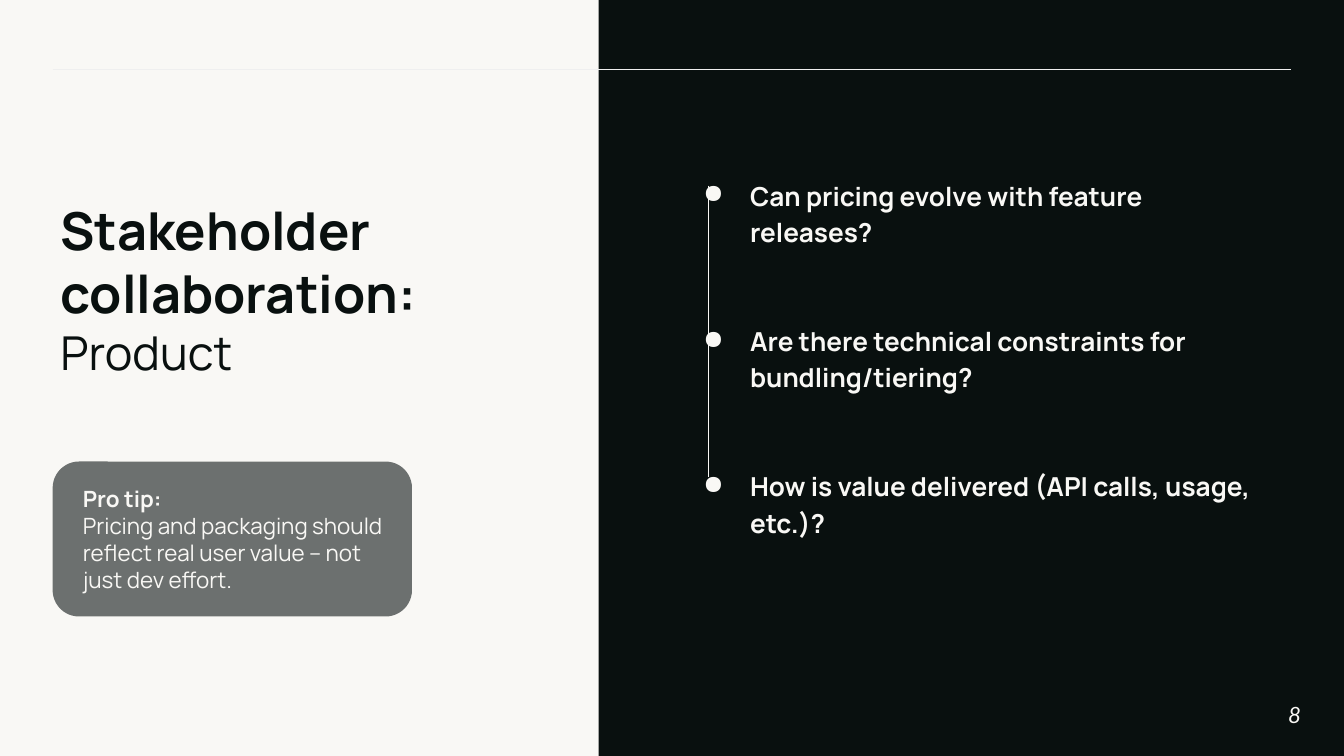
from lxml.etree import SubElement
from pptx import Presentation
from pptx.dml.color import RGBColor
from pptx.enum.shapes import MSO_CONNECTOR, MSO_SHAPE
from pptx.enum.text import MSO_ANCHOR, MSO_AUTO_SIZE, PP_ALIGN
from pptx.oxml.ns import qn
from pptx.util import Pt

TITLE = [[("Stakeholder collaboration: ", {"size": "title", "bold": True}),
          ("Product", {"size": "subtitle"})]]
QUESTIONS = [
    "Can pricing evolve with feature releases?",
    "Are there technical constraints for bundling/tiering?",
    "How is value delivered (API calls, usage, etc.)?",
]
TIP = [
    [("Pro tip:", {"bold": True})],
    [("Pricing and packaging should reflect real user value – not just dev effort.", {})],
]
PAGE_NUMBER = "8"

THEME = {
    "font": "Manrope",
    "number_font": "Lato",
    "ink": "09100F",
    "paper": "F9F8F5",
    "rule": "EFEFEF",
    "tip": "6C706F",
    "sizes": {"title": 28, "subtitle": 25, "question": 14, "small": 12},
}
PAGE_WIDTH, PAGE_HEIGHT = 720, 405
PANEL_LEFT = 320.7
MARGIN = 28.2


def color(name):
    return RGBColor.from_string(THEME[name])


def write(box, paragraphs, ink="paper", size="small", font="font", italic=False,
          align=PP_ALIGN.LEFT, anchor=MSO_ANCHOR.TOP, inset=0,
          line_spacing=None, gap=0, after=0, bulleted=False):
    frame = box.text_frame
    frame.word_wrap = True
    frame.auto_size = MSO_AUTO_SIZE.NONE
    frame.vertical_anchor = anchor
    frame.margin_left = frame.margin_right = Pt(inset)
    frame.margin_top = frame.margin_bottom = Pt(inset)
    for index, spans in enumerate(paragraphs):
        para = frame.add_paragraph() if index else frame.paragraphs[0]
        para.alignment = align
        para.space_before = Pt(gap if index else 0)
        para.space_after = Pt(after)
        if line_spacing:
            para.line_spacing = line_spacing
        if bulleted:
            add_bullet(para, ink)
        for text, style in spans:
            span = para.add_run()
            span.text = text
            span.font.name = THEME[font]
            span.font.size = Pt(THEME["sizes"][style.get("size", size)])
            span.font.bold = style.get("bold", False)
            span.font.italic = italic
            span.font.color.rgb = color(ink)


def add_bullet(para, ink):
    properties = para._p.get_or_add_pPr()
    properties.set("marL", str(Pt(36)))
    properties.set("indent", str(-Pt(25.2)))
    bullet_color = SubElement(properties, qn("a:buClr"))
    SubElement(bullet_color, qn("a:srgbClr"), val=THEME[ink])
    SubElement(properties, qn("a:buChar"), char="●")


def add_block(page, kind, left, top, width, height, fill):
    block = page.shapes.add_shape(kind, Pt(left), Pt(top), Pt(width), Pt(height))
    block.shadow.inherit = False
    block.fill.solid()
    block.fill.fore_color.rgb = color(fill)
    block.line.fill.background()
    return block


def add_line(page, start, end, ink):
    line = page.shapes.add_connector(
        MSO_CONNECTOR.STRAIGHT, *(Pt(value) for value in start + end))
    line.line.color.rgb = color(ink)
    line.line.width = Pt(0.75)
    SubElement(line._element.spPr, qn("a:effectLst"))


def add_text(page, left, top, width, height, paragraphs, **style):
    box = page.shapes.add_textbox(Pt(left), Pt(top), Pt(width), Pt(height))
    write(box, paragraphs, **style)


def main():
    deck = Presentation()
    deck.slide_width, deck.slide_height = Pt(PAGE_WIDTH), Pt(PAGE_HEIGHT)
    page = deck.slides.add_slide(deck.slide_layouts[5])
    page.background.fill.solid()
    page.background.fill.fore_color.rgb = color("paper")

    add_block(page, MSO_SHAPE.RECTANGLE, PANEL_LEFT, 0,
              PAGE_WIDTH - PANEL_LEFT, PAGE_HEIGHT, "ink")
    add_line(page, (MARGIN, 37.2), (PAGE_WIDTH - MARGIN, 37.2), "rule")

    title = page.shapes.title
    title.left, title.top, title.width, title.height = Pt(32.4), Pt(110.2), Pt(213.8), Pt(89.3)
    write(title, TITLE, ink="ink", anchor=MSO_ANCHOR.MIDDLE, after=10)

    add_line(page, (379.4, 99.4), (379.4, 255.6), "paper")
    questions = [[(question, {"bold": True})] for question in QUESTIONS]
    add_text(page, 365.8, 94, 311, 196, questions, size="question",
             line_spacing=1.15, gap=39.3, bulleted=True)

    tip = add_block(page, MSO_SHAPE.ROUNDED_RECTANGLE, MARGIN, 247.3, 192.5, 83, "tip")
    tip.adjustments[0] = 0.17
    add_text(page, 37.3, 252.7, 176.4, 70.6, TIP, inset=7.2)

    add_text(page, 653.8, 367.2, 43.2, 31, [[(PAGE_NUMBER, {})]], font="number_font",
             italic=True, align=PP_ALIGN.RIGHT, anchor=MSO_ANCHOR.MIDDLE)
    deck.save("out.pptx")


if __name__ == "__main__":
    main()
